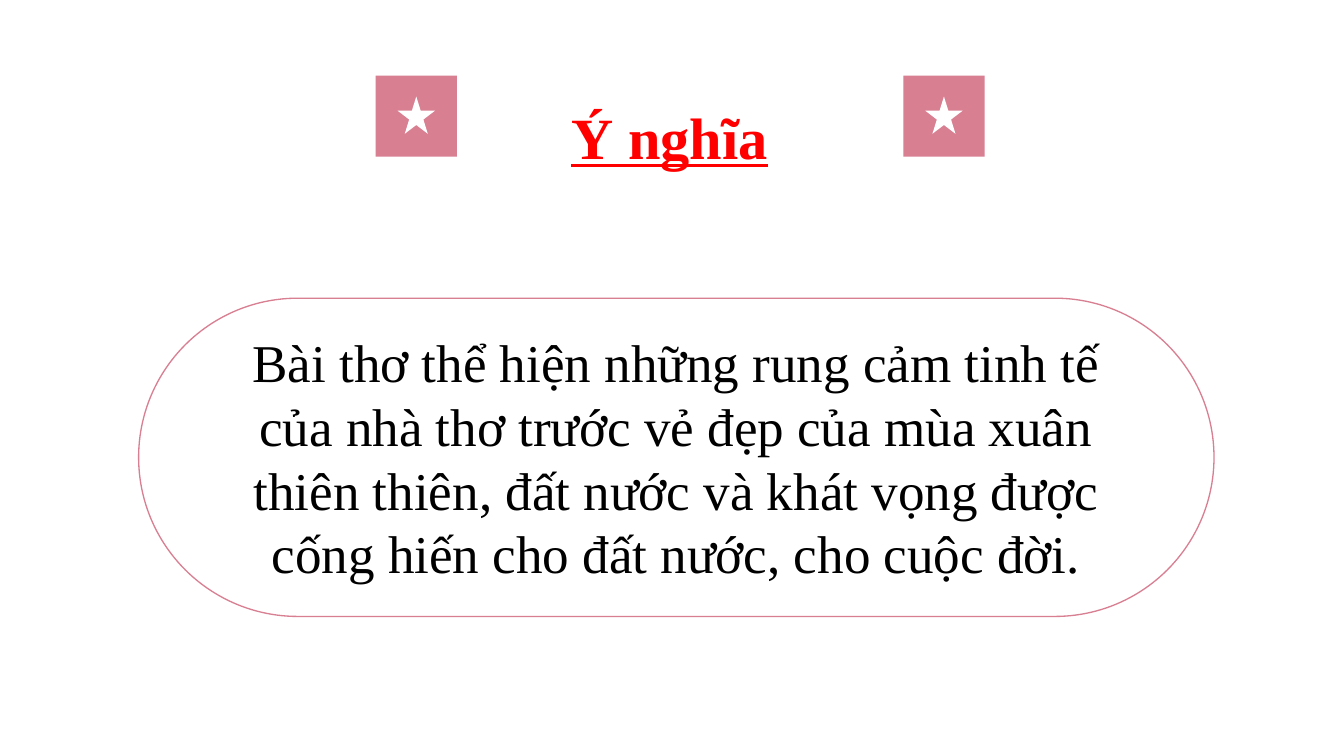
from pptx import Presentation
from pptx import util as u
from pptx.dml.color import RGBColor
from pptx.enum import shapes, text

COLORS = {"rose": "D97F92", "white": "FFFFFF", "red": "FF0000", "black": "000000"}

presentation = Presentation()
presentation.slide_width = u.Inches(14.06)
presentation.slide_height = u.Inches(7.91)
slide = presentation.slides.add_slide(presentation.slide_layouts[6])


def add_text(words, left, top, width, height, size, color, bold=False, underline=False, spacing=None):
    box = slide.shapes.add_textbox(u.Inches(left), u.Inches(top), u.Inches(width), u.Inches(height))
    frame = box.text_frame
    frame.word_wrap = True
    frame.auto_size = text.MSO_AUTO_SIZE.SHAPE_TO_FIT_TEXT
    frame.margin_left = frame.margin_right = u.Inches(0.13)
    frame.margin_top = frame.margin_bottom = u.Inches(0.06)
    paragraph = frame.paragraphs[0]
    paragraph.alignment = text.PP_ALIGN.CENTER
    paragraph.line_spacing = spacing
    run = paragraph.add_run()
    run.text = words
    run.font.name = "Times New Roman"
    run.font.size = u.Pt(size)
    run.font.bold = bold
    run.font.underline = underline
    run.font.color.rgb = RGBColor.from_string(COLORS[color])


def add_figure(kind, left, top, width, height, fill=None, line=None):
    shape = slide.shapes.add_shape(kind, u.Inches(left), u.Inches(top), u.Inches(width), u.Inches(height))
    shape.shadow.inherit = False
    if fill:
        shape.fill.solid()
        shape.fill.fore_color.rgb = RGBColor.from_string(COLORS[fill])
    else:
        shape.fill.background()
    if line:
        shape.line.color.rgb = RGBColor.from_string(COLORS[line])
        shape.line.width = u.Pt(1)
    else:
        shape.line.fill.background()
    return shape


for badge_left in (3.93, 9.45):
    add_figure(shapes.MSO_SHAPE.RECTANGLE, badge_left, 0.79, 0.85, 0.85, fill="rose")
    add_figure(shapes.MSO_SHAPE.STAR_5_POINT, badge_left + 0.23, 1.01, 0.39, 0.39, fill="white")

add_text("Ý nghĩa", 4.28, 0.7, 5.45, 1.05, size=44, color="red", bold=True, underline=True, spacing=1.4)
add_text(
    "Bài thơ thể hiện những rung cảm tinh tế của nhà thơ trước vẻ đẹp của mùa xuân "
    "thiên thiên, đất nước và khát vọng được cống hiến cho đất nước, cho cuộc đời.",
    2.11, 3.39, 9.92, 2.82, size=40, color="black",
)

meaning_frame = add_figure(shapes.MSO_SHAPE.ROUNDED_RECTANGLE, 1.45, 3.12, 11.25, 3.33, line="rose")
meaning_frame.adjustments[0] = 0.5

presentation.save("out.pptx")
